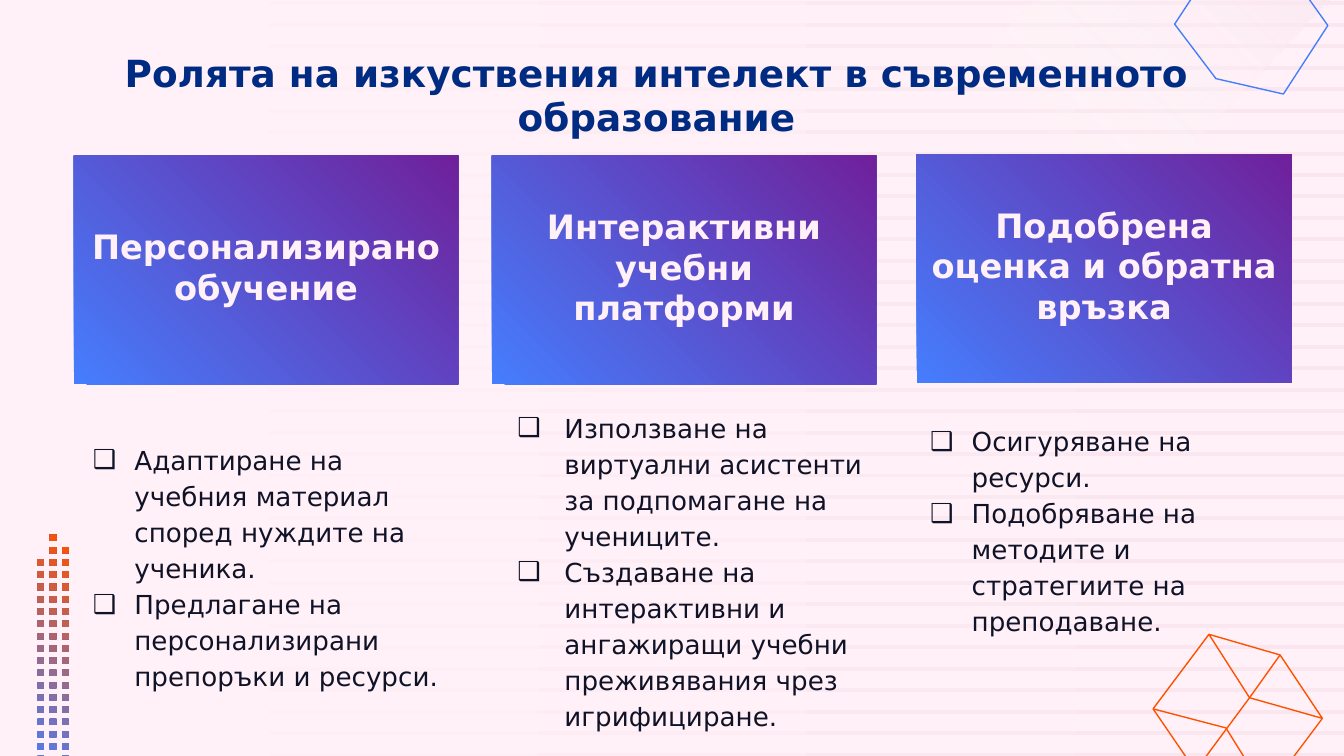
from collections import namedtuple

from lxml.etree import SubElement
from pptx import Presentation
from pptx.dml.color import RGBColor
from pptx.enum.shapes import MSO_SHAPE
from pptx.enum.text import MSO_ANCHOR, MSO_AUTO_SIZE, PP_ALIGN
from pptx.oxml.ns import qn
from pptx.util import Inches, Pt

# Grid: 100 square-celled columns across the slide; boxes are in cells
WIDTH = Inches(10)
HEIGHT = WIDTH * 9 // 16
CELL = WIDTH / 100
Box = namedtuple("Box", "left top width height")

FONT = "DejaVu Sans"
PINK, ROSE, WHITE = "FFF1F7", "FAE6EF", "FFFFFF"
BLUE, PURPLE, ORANGE = "457EFD", "70209B", "FF5100"
NAVY, INK = "002B82", "101327"

# Heading, its card, bullets, their box, left margin and hanging indent
TOPICS = [
    ("Персонализирано обучение", Box(5.5, 11.6, 28.6, 17),
     ["Адаптиране на учебния материал според нуждите на ученика.",
      "Предлагане на персонализирани препоръки и ресурси."],
     Box(5.9, 31.7, 27.8, 20.5), 3.1, 3.1),
    ("Интерактивни учебни платформи", Box(36.6, 11.6, 28.6, 17),
     ["Използване на виртуални асистенти за подпомагане на учениците.",
      "Създаване на интерактивни и ангажиращи учебни преживявания чрез игрифициране."],
     Box(36, 29.3, 29.9, 23.3), 5, 3.5),
    ("Подобрена оценка и обратна връзка", Box(68.2, 11.5, 27.9, 17),
     ["Осигуряване на ресурси.",
      "Подобряване на методите и стратегиите на преподаване."],
     Box(68.2, 30.3, 27.9, 21.1), 3.1, 3.1),
]


def color(code):
    return RGBColor.from_string(code)


def cells(count):
    return round(count * CELL)


def place(shape, box):
    shape.left, shape.top, shape.width, shape.height = map(cells, box)


def paint_gradient(shape, start, end, angle):
    shape.fill.gradient()
    shape.fill.gradient_angle = angle
    stops = shape.fill.gradient_stops
    for stop, code in zip(stops, (start, end)):
        stop.color.rgb = color(code)
    return stops


def add_rectangle(page, box):
    shape = page.shapes.add_shape(MSO_SHAPE.RECTANGLE, *map(cells, box))
    shape.shadow.inherit = False
    shape.line.fill.background()
    return shape


def add_outline(page, box, contours, close=True):
    """Draw contours whose points are shares of the box."""
    paths = [[(cells(box.left + x * box.width), cells(box.top + y * box.height))
              for x, y in contour] for contour in contours]
    builder = page.shapes.build_freeform(*paths[0][0])
    for index, path in enumerate(paths):
        if index:
            builder.move_to(*path[0])
        builder.add_line_segments(path[1:], close=close)
    shape = builder.convert_to_shape()
    shape.shadow.inherit = False
    shape.line.fill.background()
    return shape


def stroke(shape, code):
    shape.fill.background()
    shape.line.color.rgb = color(code)
    shape.line.width = Pt(0.75)


def set_frame(shape, anchor, top_inset=1):
    frame = shape.text_frame
    frame.word_wrap = True
    frame.auto_size = MSO_AUTO_SIZE.NONE
    frame.vertical_anchor = anchor
    frame.margin_left = frame.margin_right = frame.margin_bottom = cells(1)
    frame.margin_top = cells(top_inset)
    return frame


def add_text(para, text, size, code, bold=False):
    span = para.add_run()
    span.text = text
    span.font.name = FONT
    span.font.size = Pt(size)
    span.font.bold = bold
    span.font.color.rgb = color(code)


def bring_to_front(shape):
    shape.element.getparent().append(shape.element)


def draw_stripes(page, box, count=36):
    pitch = box.height / (count - 1)
    for row in range(count):
        stripe = add_rectangle(page, Box(box.left, box.top + row * pitch, box.width, 0.3))
        paint_gradient(stripe, PINK, ROSE, 0)


def draw_glow(page, box):
    glow = add_outline(page, box, [[(0.31, 0), (0, 0.48), (0.36, 1), (1, 0)]])
    stops = paint_gradient(glow, ROSE, WHITE, 225)
    stops[1].position = 0.61
    fill = glow.element.spPr.find(qn("a:gradFill"))
    for code, alpha in zip(fill.iter(qn("a:srgbClr")), ("71000", "0")):
        SubElement(code, qn("a:alpha"), val=alpha)


def draw_hexagon(page, box):
    corners = [(0.74, 0.11), (1, 0.51), (0.71, 1), (0.27, 0.89), (0, 0.5), (0.3, 0)]
    stroke(add_outline(page, box, [corners]), BLUE)


def draw_crystal(page, box):
    peak, right_top, right = (0.33, 0), (0.75, 0.13), (1, 0.53)
    right_low, left_low, left = (0.67, 1), (0.25, 0.86), (0, 0.47)
    upper, lower = (0.57, 0.4), (0.43, 0.59)
    edges = [
        [peak, right_top, right, right_low, left_low, left, peak, upper, right],
        [right_top, upper, left_low],
        [left, lower, right_low],
    ]
    stroke(add_outline(page, box, edges, close=False), ORANGE)


def draw_dots(page, box):
    side_x, side_y = 0.45 / box.width, 0.45 / box.height
    pitch_x, pitch_y = (1 - side_x) / 2, (1 - side_y) / 19
    squares = []
    for column, first_row in enumerate((2, 0, 1)):
        for row in range(first_row, first_row + 18):
            x, y = column * pitch_x, row * pitch_y
            squares.append([(x, y), (x, y + side_y), (x + side_x, y + side_y), (x + side_x, y)])
    paint_gradient(add_outline(page, box, squares), BLUE, ORANGE, 45)


def write_title(page, box, text):
    title = page.shapes.title
    place(title, box)
    bring_to_front(title)
    para = set_frame(title, MSO_ANCHOR.TOP).paragraphs[0]
    para.alignment = PP_ALIGN.CENTER
    add_text(para, text, 20, NAVY, bold=True)


def draw_card(page, box, heading):
    card = add_rectangle(page, box)
    paint_gradient(card, BLUE, PURPLE, 45)
    para = set_frame(card, MSO_ANCHOR.MIDDLE, 0.5).paragraphs[0]
    para.alignment = PP_ALIGN.CENTER
    add_text(para, heading, 18, PINK, bold=True)


def write_list(body, box, items, margin, hanging):
    place(body, box)
    bring_to_front(body)
    frame = set_frame(body, MSO_ANCHOR.TOP)
    for index, item in enumerate(items):
        para = frame.add_paragraph() if index else frame.paragraphs[0]
        properties = para._p.get_or_add_pPr()
        properties.set("marL", str(cells(margin)))
        properties.set("indent", str(-cells(hanging)))
        SubElement(SubElement(properties, qn("a:buClr")), qn("a:srgbClr"), val=INK)
        SubElement(properties, qn("a:buFont"), typeface=FONT)
        SubElement(properties, qn("a:buChar"), char="❑")
        para.alignment = PP_ALIGN.LEFT
        para.line_spacing = 1.15
        para.space_before = Pt(0)
        add_text(para, item, 14, INK)


def main():
    deck = Presentation()
    deck.slide_width, deck.slide_height = WIDTH, HEIGHT
    page = deck.slides.add_slide(deck.slide_layouts.get_by_name("Comparison"))
    page.background.fill.solid()
    page.background.fill.fore_color.rgb = color(PINK)
    *bodies, spare = list(page.placeholders)[1:]
    spare.element.getparent().remove(spare.element)

    # Backdrop
    draw_stripes(page, Box(0, 0.1, 100, 55.9))
    draw_glow(page, Box(67.1, 0, 31.8, 21.6))
    draw_hexagon(page, Box(87.4, -3.4, 11.4, 10.4))
    draw_crystal(page, Box(85.8, 47.2, 12.6, 11.8))
    draw_dots(page, Box(2.8, 39.8, 2.3, 17.8))

    # Content
    write_title(page, Box(6.7, 2.7, 84.3, 10.5),
                "Ролята на изкуствения интелект в съвременното образование")
    for body, (heading, card_box, items, list_box, margin, hanging) in zip(bodies, TOPICS):
        draw_card(page, card_box, heading)
        write_list(body, list_box, items, margin, hanging)
    deck.save("out.pptx")


if __name__ == "__main__":
    main()
